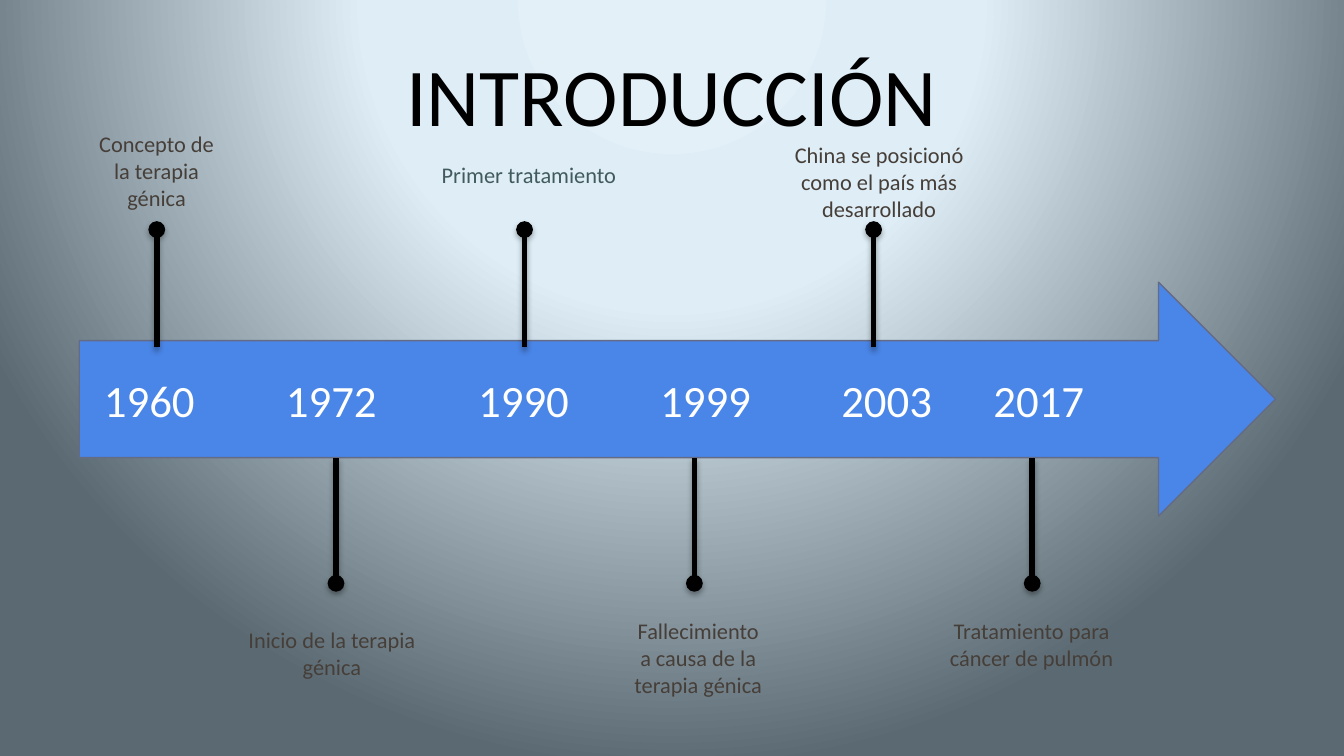
from lxml.etree import SubElement
from pptx import Presentation
from pptx.dml.color import RGBColor
from pptx.enum.shapes import MSO_CONNECTOR, MSO_SHAPE
from pptx.enum.text import MSO_ANCHOR, PP_ALIGN
from pptx.oxml import parse_xml
from pptx.oxml.ns import qn
from pptx.util import Pt

COLORS = {
    "black": "000000", "white": "FFFFFF", "arrow": "4A86E8", "edge": "646B86",
    "text": "463E38", "teal": "415B5C",
    "glow": "E3F0F8", "pale": "DEEDF6", "slate": "5B6A72",
}
NS = 'xmlns:a="http://schemas.openxmlformats.org/drawingml/2006/main"'


def color(name):
    return RGBColor.from_string(COLORS[name])


def style(para, size, name, align):
    para.alignment = align
    for run in para.runs:
        run.font.name = "Calibri"
        run.font.size = Pt(size)
        run.font.color.rgb = color(name)


prs = Presentation()
prs.slide_width, prs.slide_height = Pt(720), Pt(405)
slide = prs.slides.add_slide(prs.slide_layouts[5])
shapes = slide.shapes

# Background: radial glow centred above the slide
slide.background.fill.gradient()
old = next(slide.element.iter(qn("a:gradFill")))
stops = "".join(
    f'<a:gs pos="{pos * 1000}"><a:srgbClr val="{COLORS[name]}"/></a:gs>'
    for pos, name in ((0, "glow"), (40, "pale"), (100, "slate")))
old.getparent().replace(old, parse_xml(
    f'<a:gradFill {NS} rotWithShape="1"><a:gsLst>{stops}</a:gsLst>'
    '<a:path path="circle"><a:fillToRect l="50000" t="-80000" r="50000" b="180000"/>'
    '</a:path></a:gradFill>'))

# Title
title = shapes.title
title.left, title.top, title.width, title.height = Pt(36), Pt(16.5), Pt(648), Pt(67.5)
title.text_frame.text = "INTRODUCCIÓN"
title.text_frame.vertical_anchor = MSO_ANCHOR.MIDDLE
style(title.text_frame.paragraphs[0], 44, "black", PP_ALIGN.CENTER)

# Arrow with the years set on tab stops
arrow = shapes.add_shape(MSO_SHAPE.RIGHT_ARROW, Pt(42.5), Pt(151.2), Pt(640.8), Pt(125.3))
arrow.shadow.inherit = False
arrow.fill.solid()
arrow.fill.fore_color.rgb = color("arrow")
arrow.line.color.rgb = color("edge")
arrow.line.width = Pt(0.75)
frame = arrow.text_frame
frame.margin_left = Pt(13.2)
frame.vertical_anchor = MSO_ANCHOR.MIDDLE
years = frame.paragraphs[0]
years.text = "\t".join(["1960", "1972", "1990", "1999", "2003", "2017"])
years.space_before = Pt(4.8)
style(years, 24, "white", PP_ALIGN.LEFT)
tabs = SubElement(years._p.get_or_add_pPr(), qn("a:tabLst"))
for stop in (97.5, 200.5, 298, 395, 476.5):
    SubElement(tabs, qn("a:tab"), pos=str(Pt(stop)), algn="l")

# Pins: x, start and end height
UP, DOWN = (186, 123), (245.5, 312.5)
for x, (start, end) in ((84, UP), (281, UP), (468, UP),
                        (180, DOWN), (372, DOWN), (553, DOWN)):
    pin = shapes.add_connector(MSO_CONNECTOR.STRAIGHT, Pt(x), Pt(start), Pt(x), Pt(end))
    pin.line.color.rgb = color("black")
    pin.line.width = Pt(3)
    SubElement(pin.line._get_or_add_ln(), qn("a:tailEnd"), type="oval")
    pin._element.spPr.append(parse_xml(
        f'<a:effectLst {NS}><a:outerShdw blurRad="{Pt(3.1)}" dist="{Pt(1.8)}" '
        'dir="5400000" rotWithShape="0"><a:srgbClr val="000000">'
        '<a:alpha val="35000"/></a:srgbClr></a:outerShdw></a:effectLst>'))

# Labels: left, top, width, height, colour, text
labels = [
    (42.5, 66.2, 82.8, 51, "text", "Concepto de la terapia génica"),
    (126, 332, 103.7, 36, "text", "Inicio de la terapia génica"),
    (224, 82.8, 118.8, 21.6, "teal", "Primer tratamiento"),
    (331.2, 327, 85.7, 51, "text", "Fallecimiento a causa de la terapia génica"),
    (417, 72, 108, 51, "text", "China se posicionó como el país más desarrollado"),
    (487.5, 327, 130.3, 36, "text", "Tratamiento para cáncer de pulmón"),
]
for left, top, width, height, name, text in labels:
    label = shapes.add_textbox(Pt(left), Pt(top), Pt(width), Pt(height))
    label.text_frame.word_wrap = True
    label.text_frame.text = text
    style(label.text_frame.paragraphs[0], 12, name, PP_ALIGN.CENTER)

prs.save("out.pptx")
